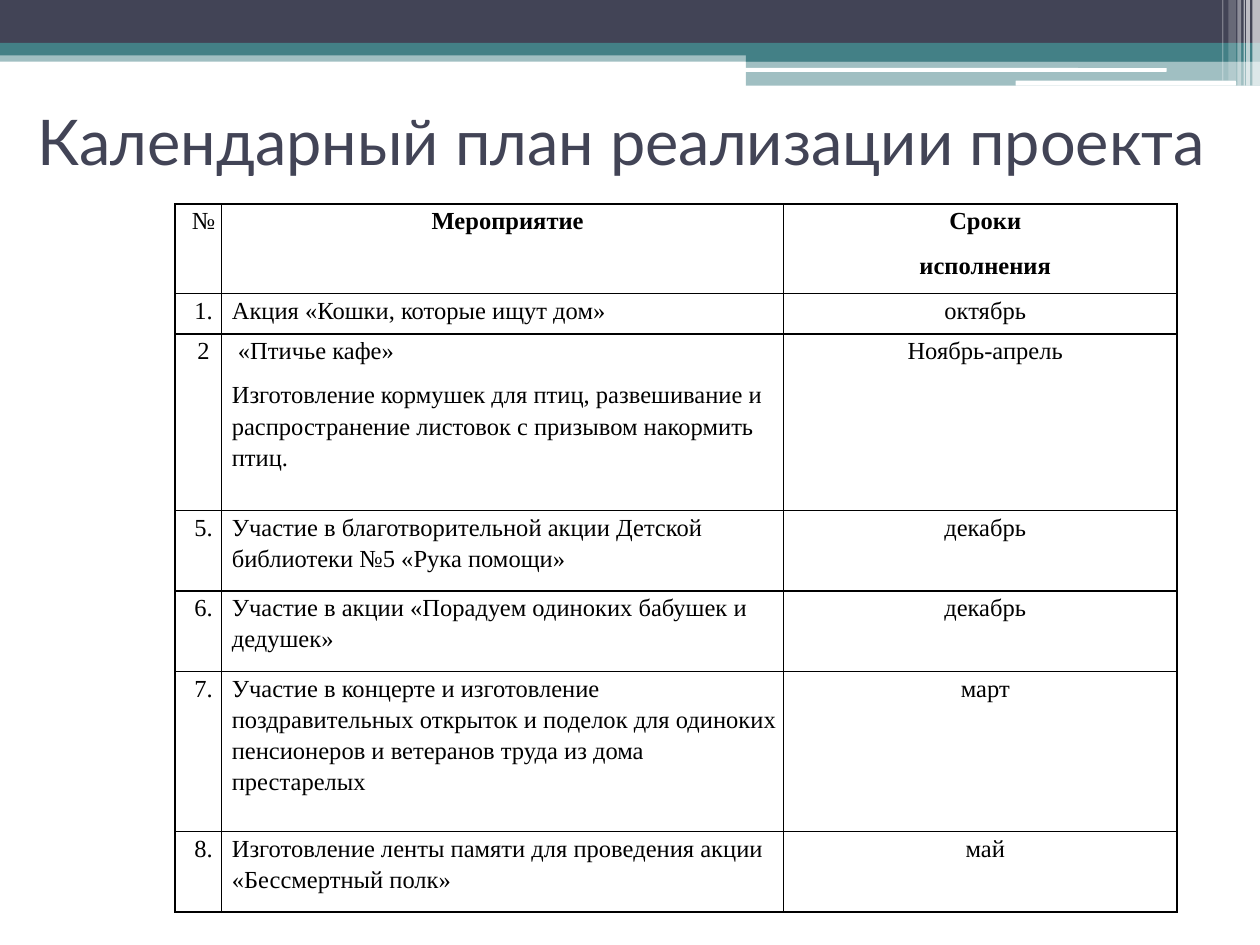
from lxml import etree
from pptx import Presentation, util as u
from pptx.dml.color import RGBColor
from pptx.enum import shapes, text
from pptx.oxml import ns

HUES = {"dark": "424456", "teal": "438086", "white": "FFFFFF", "black": "000000"}
RECT = shapes.MSO_SHAPE.RECTANGLE
ROUND = shapes.MSO_SHAPE.ROUNDED_RECTANGLE

BANDS = [
    (RECT, 0, 0.4, 10, 0.09, "teal", 50),
    (RECT, 0, 0, 10, 0.34, "dark", 100),
    (RECT, 0, 0.34, 10, 0.1, "teal", 100),
    (RECT, 5.92, 0.39, 4.08, 0.1, "teal", 100),
    (RECT, 5.92, 0.48, 4.08, 0.2, "teal", 50),
    (ROUND, 5.91, 0.54, 3.35, 0.03, "white", 100),
    (ROUND, 8.06, 0.64, 1.75, 0.04, "white", 100),
]
STRIPES = [
    (9.94, 0.06, 0.68, 65),
    (9.89, 0.03, 0.68, 65),
    (9.87, 0.01, 0.68, 60),
    (9.82, 0.03, 0.68, 40),
    (9.75, 0.06, 0.64, 20),
    (9.7, 0.01, 0.64, 30),
]

COLS = [0.37, 4.46, 3.12]
ROWS = [0.71, 0.32, 1.4, 0.64, 0.64, 1.27, 0.64]
PLAN = [
    ("№", "Мероприятие", "Сроки\nисполнения"),
    ("1.", "Акция «Кошки, которые ищут дом»", "октябрь"),
    ("2", " «Птичье кафе»\nИзготовление кормушек для птиц, развешивание и "
     "распространение листовок с призывом накормить птиц.", "Ноябрь-апрель"),
    ("5.", "Участие в благотворительной акции Детской библиотеки №5 "
     "«Рука помощи»", "декабрь"),
    ("6.", "Участие в акции «Порадуем одиноких бабушек и дедушек»", "декабрь"),
    ("7.", "Участие в концерте и изготовление поздравительных открыток и "
     "поделок для одиноких пенсионеров и ветеранов труда из дома "
     "престарелых", "март"),
    ("8.", "Изготовление ленты памяти для проведения акции "
     "«Бессмертный полк»", "май"),
]


def color(name):
    return RGBColor.from_string(HUES[name])


def style(para, face, size, hue, bold=False):
    font = para.font
    font.name, font.size, font.bold = face, u.Pt(size), bold
    font.color.rgb = color(hue)


def add_bar(slide, kind, left, top, width, height, hue, alpha):
    bar = slide.shapes.add_shape(kind, *map(u.Inches, (left, top, width, height)))
    bar.shadow.inherit = False
    bar.line.fill.background()
    bar.fill.solid()
    bar.fill.fore_color.rgb = color(hue)
    if alpha < 100:
        tint = bar.fill._xPr.find(".//" + ns.qn("a:srgbClr"))
        etree.SubElement(tint, ns.qn("a:alpha"), val=str(alpha * 1000))


def add_title(slide, words):
    box = slide.shapes.add_textbox(*map(u.Inches, (0.2, 0.76, 9.69, 0.71)))
    frame = box.text_frame
    frame.word_wrap = True
    frame.vertical_anchor = text.MSO_ANCHOR.MIDDLE
    frame.text = words
    style(frame.paragraphs[0], "Lato", 36, "dark")


def add_edges(cell):
    props = cell._tc.get_or_add_tcPr()
    for side in ("lnL", "lnR", "lnT", "lnB"):
        line = etree.SubElement(props, ns.qn("a:" + side), w=str(u.Pt(1)))
        fill = etree.SubElement(line, ns.qn("a:solidFill"))
        etree.SubElement(fill, ns.qn("a:srgbClr"), val=HUES["black"])


def fill_cell(cell, words, align, bold):
    add_edges(cell)
    cell.fill.solid()
    cell.fill.fore_color.rgb = color("white")
    cell.margin_left = u.Inches(0.08)
    cell.margin_right = cell.margin_top = cell.margin_bottom = 0
    cell.text = words
    for para in cell.text_frame.paragraphs:
        para.alignment = align
        para.line_spacing = 1.15
        para.space_after = u.Pt(7.5)
        style(para, "Times New Roman", 14, "black", bold)


def add_plan(slide):
    frame = slide.shapes.add_table(
        len(ROWS), len(COLS), u.Inches(1.39), u.Inches(1.62),
        u.Inches(sum(COLS)), u.Inches(sum(ROWS)))
    table = frame.table
    for col, width in zip(table.columns, COLS):
        col.width = u.Inches(width)
    for row, height in zip(table.rows, ROWS):
        row.height = u.Inches(height)
    for r, row in enumerate(PLAN):
        for c, words in enumerate(row):
            left = r > 0 and c == 1
            align = text.PP_ALIGN.LEFT if left else text.PP_ALIGN.CENTER
            fill_cell(table.cell(r, c), words, align, r == 0 and c > 0)


def main():
    deck = Presentation()
    deck.slide_width, deck.slide_height = u.Inches(10), u.Inches(7.5)
    slide = deck.slides.add_slide(deck.slide_layouts[6])
    for band in BANDS:
        add_bar(slide, *band)
    for left, width, height, alpha in STRIPES:
        add_bar(slide, RECT, left, 0, width, height, "white", alpha)
    add_title(slide, "Календарный план реализации проекта")
    add_plan(slide)
    deck.save("out.pptx")


if __name__ == "__main__":
    main()
